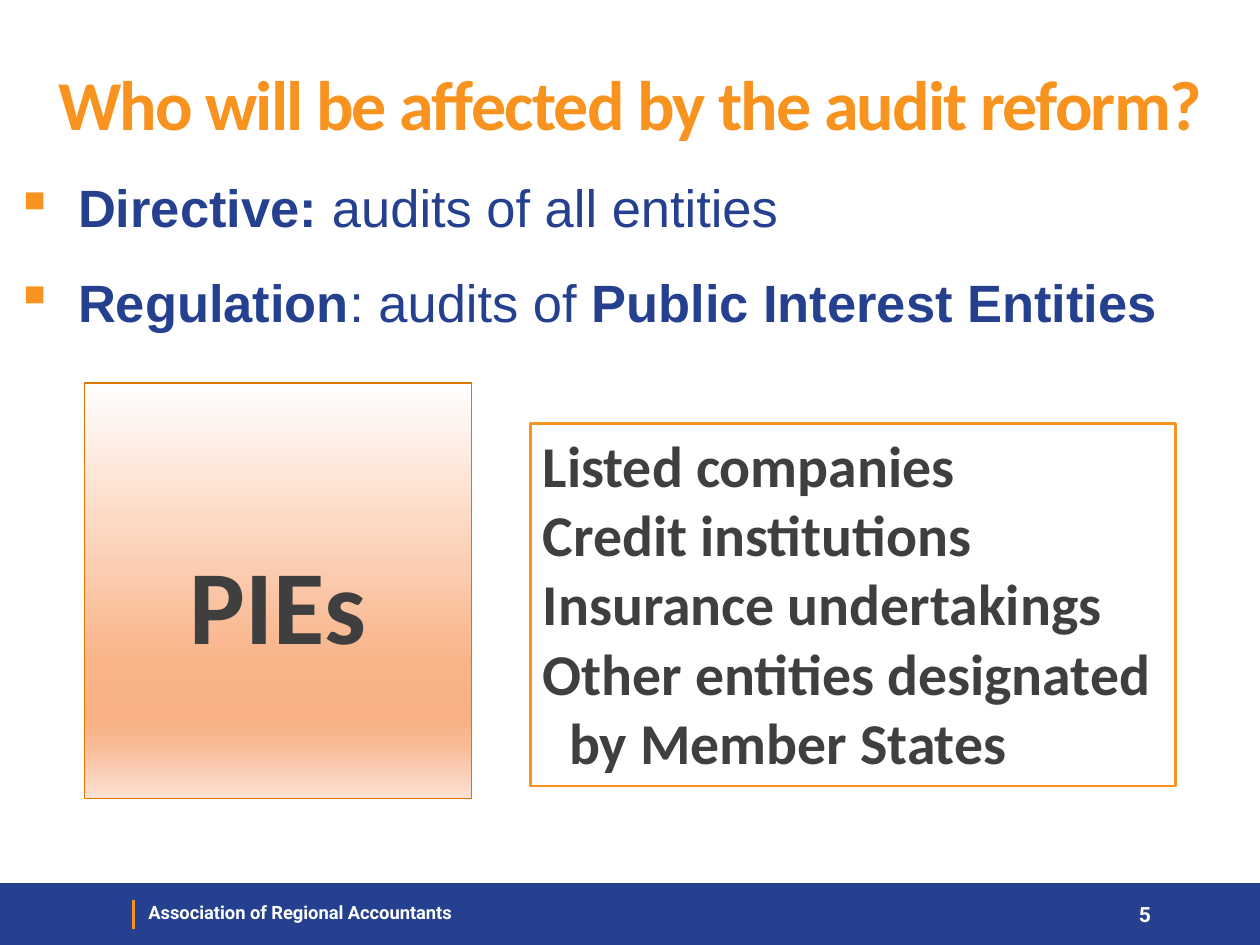
from dataclasses import dataclass

from lxml import etree
from pptx import Presentation
from pptx.dml.color import RGBColor
from pptx.enum.shapes import MSO_CONNECTOR, MSO_SHAPE
from pptx.enum.text import MSO_ANCHOR, PP_ALIGN
from pptx.oxml.ns import qn
from pptx.util import Inches, Pt

RECT = MSO_SHAPE.RECTANGLE
STRAIGHT = MSO_CONNECTOR.STRAIGHT
TOP, MIDDLE = MSO_ANCHOR.TOP, MSO_ANCHOR.MIDDLE
LEFT, CENTER = PP_ALIGN.LEFT, PP_ALIGN.CENTER


@dataclass(frozen=True)
class Theme:
    blue: str = "24408F"
    orange: str = "F7931E"
    rust: str = "DE7700"
    grey: str = "3F3F3F"
    white: str = "FFFFFF"
    heading: str = "Calibri"
    body: str = "Arial"
    footer: str = "Roboto"
    title_size: float = 40
    body_size: float = 30
    label_size: float = 60
    list_size: float = 33
    footer_size: float = 10.5
    number_size: float = 12
    glow: tuple = ((0, "FFFEFE"), (68, "F9B388"), (81, "F9B183"),
                   (86, "F9B892"), (100, "FCE1D4"))


T = Theme()


def rgb(value):
    return RGBColor.from_string(value)


def add_run(p, text, font, size, color, bold=True):
    r = p.add_run()
    r.text = text
    for name, value in {"name": font, "size": Pt(size), "bold": bold}.items():
        setattr(r.font, name, value)
    r.font.color.rgb = rgb(color)
    return r


def set_frame(sp, anchor=TOP, **margins):
    """Wrap the text, anchor it and set any margins given in inches."""
    tf = sp.text_frame
    tf.word_wrap = True
    tf.vertical_anchor = anchor
    for side, value in margins.items():
        setattr(tf, f"margin_{side}", Inches(value))
    return tf


def add_text_box(slide, box, anchor=TOP, **margins):
    sp = slide.shapes.add_textbox(*map(Inches, box))
    return set_frame(sp, anchor, **margins)


def add_rect(slide, box, fill, line=None, width=1.5):
    sp = slide.shapes.add_shape(RECT, *map(Inches, box))
    sp.shadow.inherit = False
    sp.fill.solid()
    sp.fill.fore_color.rgb = rgb(fill)
    if line:
        sp.line.color.rgb = rgb(line)
        sp.line.width = Pt(width)
    else:
        sp.line.fill.background()
    return sp


def fill_downwards(sp, stops):
    """Give the shape a top-to-bottom gradient through all the stops."""
    sp.fill.gradient()
    sp.fill.gradient_angle = 270
    gs_list = sp._element.spPr.find(qn("a:gradFill")).find(qn("a:gsLst"))
    for gs in list(gs_list):
        gs_list.remove(gs)
    for position, color in stops:
        gs = etree.SubElement(gs_list, qn("a:gs"), pos=str(position * 1000))
        etree.SubElement(gs, qn("a:srgbClr"), val=color)


def set_indent(p, left):
    """Hang the first line of the paragraph back to the margin."""
    pPr = p._p.get_or_add_pPr()
    pPr.set("marL", str(Inches(left)))
    pPr.set("indent", str(-Inches(left)))
    return pPr


def add_footer(slide, box, organisation, number):
    left, top, width, height = box
    add_rect(slide, box, T.blue)
    x = left + 1.06
    rule = slide.shapes.add_connector(
        STRAIGHT, *map(Inches, (x, top + 0.13, x, top + 0.36)))
    rule.line.color.rgb = rgb(T.orange)
    rule.line.width = Pt(1.5)
    etree.SubElement(rule._element.spPr, qn("a:effectLst"))
    tf = add_text_box(slide, (left + 1.08, top + 0.09, 3.7, 0.29))
    add_run(tf.paragraphs[0], organisation, T.footer, T.footer_size, T.white)
    tf = add_text_box(slide, (left + width - 1.06, top, 0.63, height), MIDDLE)
    add_run(tf.paragraphs[0], number, T.footer, T.number_size, T.white)


def add_title(slide, box, text):
    p = add_text_box(slide, box, MIDDLE).paragraphs[0]
    p.alignment = CENTER
    r = add_run(p, text, T.heading, T.title_size, T.orange)
    r._r.get_or_add_rPr().set("spc", "-100")


def add_bullets(slide, box, items):
    """Each item is a list of (text, bold) pairs."""
    tf = add_text_box(slide, box, left=0, top=0, right=0, bottom=0)
    for i, parts in enumerate(items):
        p = tf.add_paragraph() if i else tf.paragraphs[0]
        if i:
            p.space_before = Pt(12)
        p.space_after = Pt(6)
        pPr = set_indent(p, 0.5)
        color = etree.SubElement(pPr, qn("a:buClr"))
        etree.SubElement(color, qn("a:srgbClr"), val=T.orange)
        etree.SubElement(pPr, qn("a:buChar"), char="▪")
        for text, bold in parts:
            add_run(p, text, T.body, T.body_size, T.blue, bold)


def add_label(slide, box, text):
    sp = add_rect(slide, box, T.white, T.rust, 0.75)
    fill_downwards(sp, T.glow)
    p = set_frame(sp, MIDDLE, top=0.24).paragraphs[0]
    p.alignment = CENTER
    add_run(p, text, T.heading, T.label_size, T.grey)


def add_entity_list(slide, box, entities):
    tf = set_frame(add_rect(slide, box, T.white, T.orange))
    for i, entity in enumerate(entities):
        p = tf.add_paragraph() if i else tf.paragraphs[0]
        p.alignment = LEFT
        set_indent(p, 0.21)
        add_run(p, entity, T.heading, T.list_size, T.grey)


def main():
    prs = Presentation()
    prs.slide_width, prs.slide_height = Inches(10), Inches(7.5)
    slide = prs.slides.add_slide(prs.slide_layouts[6])
    add_footer(slide, (0, 7.01, 10, 0.49),
               "Association of Regional Accountants", "5")
    add_title(slide, (0, 0, 10, 1.62),
              "Who will be affected by the audit reform?")
    add_bullets(slide, (0.12, 1.39, 9.76, 5.98), [
        [("Directive: ", True), ("audits of all entities", False)],
        [("Regulation", True), (": audits of ", False),
         ("Public Interest Entities", True)],
    ])
    add_label(slide, (0.67, 3.04, 3.07, 3.3), "PIEs")
    add_entity_list(slide, (4.21, 3.36, 5.12, 2.88), [
        "Listed companies", "Credit institutions", "Insurance undertakings",
        "Other entities designated by Member States",
    ])
    prs.save("out.pptx")


if __name__ == "__main__":
    main()
